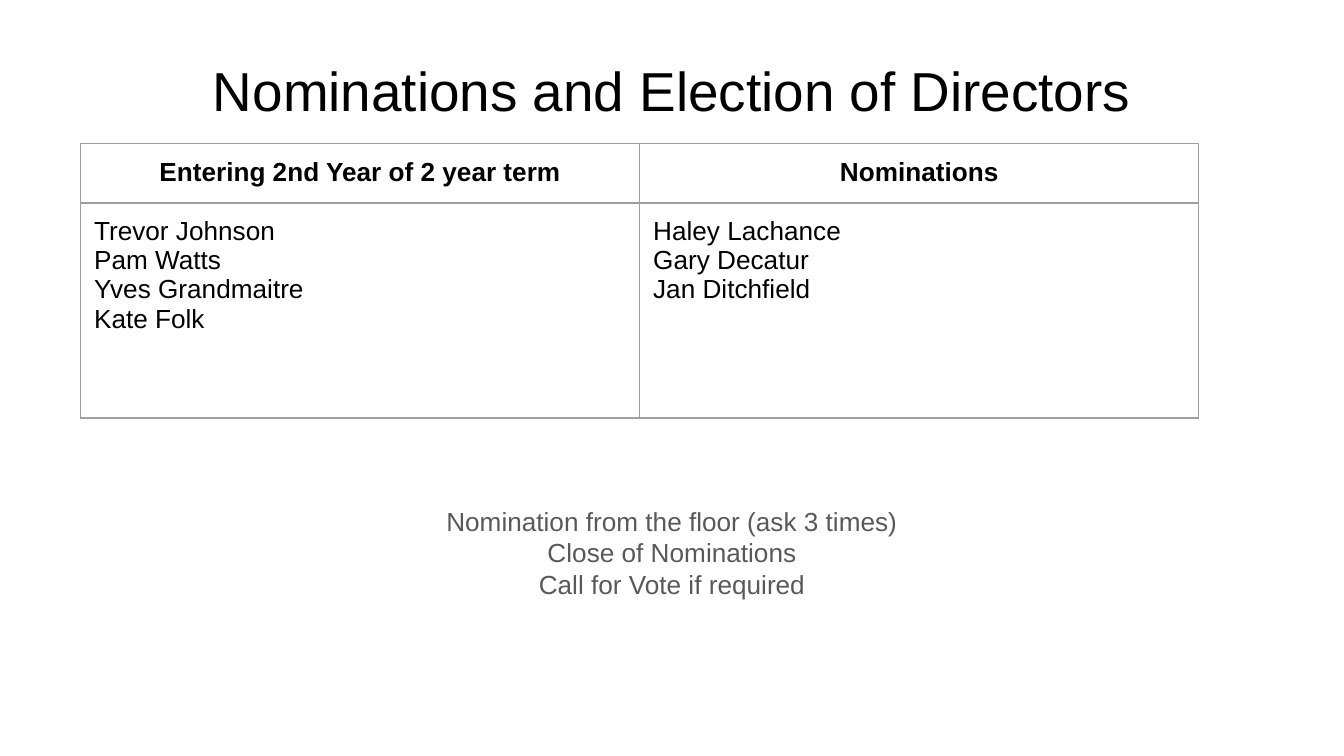
from lxml.etree import SubElement
from pptx import Presentation
from pptx.dml.color import RGBColor
from pptx.enum.text import MSO_ANCHOR, PP_ALIGN
from pptx.oxml.ns import qn
from pptx.util import Inches, Pt

COLORS = {"ink": "000000", "gray": "595959", "rule": "9E9E9E", "page": "FFFFFF"}
PAD = Inches(0.1)
HEADS = ["Entering 2nd Year of 2 year term", "Nominations"]
NAMES = [
    ["Trevor Johnson", "Pam Watts", "Yves Grandmaitre", "Kate Folk"],
    ["Haley Lachance", "Gary Decatur", "Jan Ditchfield"],
]
STEPS = ["Nomination from the floor (ask 3 times)", "Close of Nominations",
         "Call for Vote if required"]


def write(frame, lines, size=14, color="ink", bold=False, align=PP_ALIGN.CENTER):
    for i, line in enumerate(lines):
        para = frame.paragraphs[0] if i == 0 else frame.add_paragraph()
        para.alignment = align
        para.line_spacing = 1.0
        run = para.add_run()
        run.text = line
        font = run.font
        font.name = "Arial"
        font.size = Pt(size)
        font.bold = bold
        font.color.rgb = RGBColor.from_string(COLORS[color])


def set_pad(item):
    item.margin_left = item.margin_right = PAD
    item.margin_top = item.margin_bottom = PAD


def add_text(slide, lines, top, height, anchor=MSO_ANCHOR.TOP, **style):
    box = slide.shapes.add_textbox(Inches(0.34), Inches(top), Inches(9.32), Inches(height))
    frame = box.text_frame
    frame.word_wrap = True
    frame.vertical_anchor = anchor
    set_pad(frame)
    write(frame, lines, **style)


def add_rules(cell):
    props = cell._tc.get_or_add_tcPr()
    for i, side in enumerate(("lnL", "lnR", "lnT", "lnB")):
        line = props.makeelement(qn(f"a:{side}"), {"w": str(Pt(0.75))})
        props.insert(i, line)
        fill = SubElement(line, qn("a:solidFill"))
        SubElement(fill, qn("a:srgbClr"), val=COLORS["rule"])


def fill_cell(cell, lines, **style):
    set_pad(cell)
    cell.fill.background()
    write(cell.text_frame, lines, **style)
    add_rules(cell)


def add_grid(slide):
    widths, heights = [4.16, 4.16], [0.44, 1.6]
    frame = slide.shapes.add_table(2, 2, Inches(0.6), Inches(1.07),
                                   Inches(sum(widths)), Inches(sum(heights)))
    table = frame.table
    table.first_row = table.horz_banding = False
    for col, width in zip(table.columns, widths):
        col.width = Inches(width)
    for row, height in zip(table.rows, heights):
        row.height = Inches(height)
    for i, (head, names) in enumerate(zip(HEADS, NAMES)):
        fill_cell(table.cell(0, i), [head], bold=True)
        fill_cell(table.cell(1, i), names, align=PP_ALIGN.LEFT)


def main():
    deck = Presentation()
    deck.slide_width = Inches(10)
    deck.slide_height = deck.slide_width * 9 // 16
    slide = deck.slides.add_slide(deck.slide_layouts[6])
    back = slide.background.fill
    back.solid()
    back.fore_color.rgb = RGBColor.from_string(COLORS["page"])
    add_text(slide, ["Nominations and Election of Directors"], 0.29, 0.72,
             anchor=MSO_ANCHOR.BOTTOM, size=29.4)
    add_text(slide, STEPS, 3.66, 0.91, color="gray")
    add_grid(slide)
    deck.save("out.pptx")


if __name__ == "__main__":
    main()
